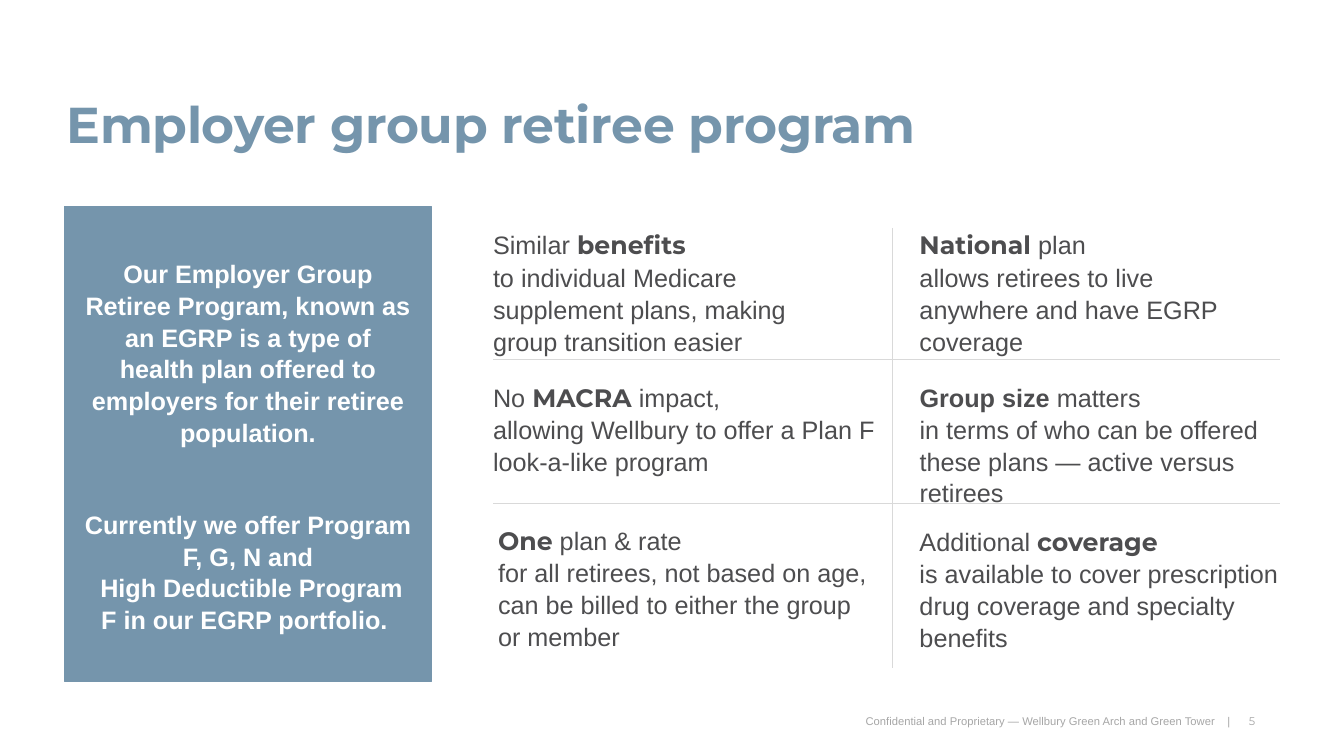
"""Build the slide on the employer group retiree program."""
import pptx
import pptx.dml.color
import pptx.enum.shapes
import pptx.enum.text
import pptx.oxml.ns
import pptx.util
from dataclasses import dataclass
from lxml import etree

Inches, Pt = pptx.util.Inches, pptx.util.Pt
RGB = pptx.dml.color.RGBColor.from_string
ALIGN = pptx.enum.text.PP_ALIGN


@dataclass(frozen=True)
class Theme:
    blue: RGB = RGB("7595AC")
    white: RGB = RGB("FFFFFF")
    ink: RGB = RGB("4D4D4F")
    rule: RGB = RGB("D9D9D9")
    grey: RGB = RGB("A6A6A6")
    head: str = "Montserrat"
    body: str = "Arial"
    title_size: Pt = Pt(36)
    body_size: Pt = Pt(18)
    small_size: Pt = Pt(8)
    leading: float = 1.05
    loose: Pt = Pt(23)


T = Theme()


def prepare(tf, inset=0):
    tf.word_wrap = True
    tf.auto_size = pptx.enum.text.MSO_AUTO_SIZE.NONE
    tf.vertical_anchor = pptx.enum.text.MSO_ANCHOR.TOP
    tf.margin_left = tf.margin_right = tf.margin_top = tf.margin_bottom = Inches(inset)
    return tf


def style(font, name, size, color, bold=False):
    font.name, font.size, font.bold = name, size, bold
    font.color.rgb = color


prs = pptx.Presentation()
prs.slide_width, prs.slide_height = Inches(13.33), Inches(7.5)
s = prs.slides.add_slide(prs.slide_layouts[5])

COLS = (4.89, 9.12)
ROWS = (2.26, 3.78, 5.2)
RULES = (
    (8.85, 2.26, 8.85, 6.63),
    (COLS[0], 3.57, 12.7, 3.57),
    (COLS[0], 4.99, 12.7, 4.99),
)

title = s.shapes.title
title.left, title.top, title.width, title.height = map(Inches, (0.66, 1, 11.54, 1.05))
p = prepare(title.text_frame).paragraphs[0]
p.alignment, p.line_spacing = ALIGN.LEFT, Pt(38)
r = p.add_run()
r.text = "Employer group retiree program"
style(p.font, T.head, T.title_size, T.blue, True)
style(r.font, T.head, T.title_size, T.blue, True)
r.font._element.set("spc", "-20")

panel = s.shapes.add_shape(
    pptx.enum.shapes.MSO_SHAPE.RECTANGLE, *map(Inches, (0.64, 2.05, 3.64, 4.71)))
panel.shadow.inherit = False
panel.fill.solid()
panel.fill.fore_color.rgb = panel.line.color.rgb = T.blue
panel.line.width = Pt(0.75)
tf = prepare(panel.text_frame, 0.2)
tf.margin_top = Inches(0.5)
panel_text = (
    ("Our Employer Group Retiree Program, known as an EGRP is a type of health plan "
     "offered to employers for their retiree population.", 0),
    ("Currently we offer Program F, G, N and", 43),
    (" High Deductible Program F in our EGRP portfolio. ", 0),
)
for i, (text, gap) in enumerate(panel_text):
    p = tf.add_paragraph() if i else tf.paragraphs[0]
    p.text = text
    p.alignment, p.line_spacing, p.space_before = ALIGN.CENTER, T.leading, Pt(gap)
    style(p.font, T.body, T.body_size, T.white, True)

benefits = (
    (0, 0, 3.6, T.loose, (("Similar ", None), ("benefits", T.head)),
     "to individual Medicare supplement plans, making group transition easier"),
    (1, 0, 3.36, T.loose, (("National ", T.head), ("plan", None)),
     "allows retirees to live anywhere and have EGRP coverage"),
    (0, 1, 3.81, T.leading, (("No ", None), ("MACRA ", T.head), ("impact,", None)),
     "allowing Wellbury to offer a Plan F look-a-like program"),
    (1, 1, 3.72, T.leading, (("Group size ", T.body), ("matters", None)),
     "in terms of who can be offered these plans — active versus retirees"),
    (0, 2, 3.81, T.leading, (("One", T.head), (" plan & rate", None)),
     "for all retirees, not based on age, can be billed to either the group or member"),
    (1, 2, 3.8, T.loose, (("Additional ", None), ("coverage", T.head)),
     "is available to cover prescription drug coverage and specialty benefits"),
)
for col, row, width, spacing, lead, detail in benefits:
    indent = 0.05 if (col, row) == (0, 2) else 0
    box = s.shapes.add_textbox(*map(
        Inches, (COLS[col] + indent, ROWS[row], width - indent, 1.27)))
    tf = prepare(box.text_frame)
    p = tf.paragraphs[0]
    p.line_spacing = spacing
    for text, bold_font in lead:
        r = p.add_run()
        r.text = text
        style(r.font, bold_font or T.body, T.body_size, T.ink, bool(bold_font))
    p = tf.add_paragraph()
    p.text, p.line_spacing = detail, spacing
    style(p.font, T.body, T.body_size, T.ink)

for ends in RULES:
    rule = s.shapes.add_connector(
        pptx.enum.shapes.MSO_CONNECTOR.STRAIGHT, *map(Inches, ends))
    rule.line.color.rgb, rule.line.width = T.rule, Pt(0.5)
    etree.SubElement(rule._element.spPr, pptx.oxml.ns.qn("a:effectLst"))

footer = (
    (7.94, 4.27, T.body,
     "Confidential and Proprietary — Wellbury Green Arch and Green Tower\u00a0\u00a0\u00a0 |"),
    (12.2, 0.25, T.head, "5"),
)
for left, width, font, text in footer:
    box = s.shapes.add_textbox(*map(Inches, (left, 7.09, width, 0.4)))
    p = prepare(box.text_frame).paragraphs[0]
    p.text, p.alignment = text.replace("\u00a0", " "), ALIGN.RIGHT
    style(p.font, font, T.small_size, T.grey)

prs.save("out.pptx")
